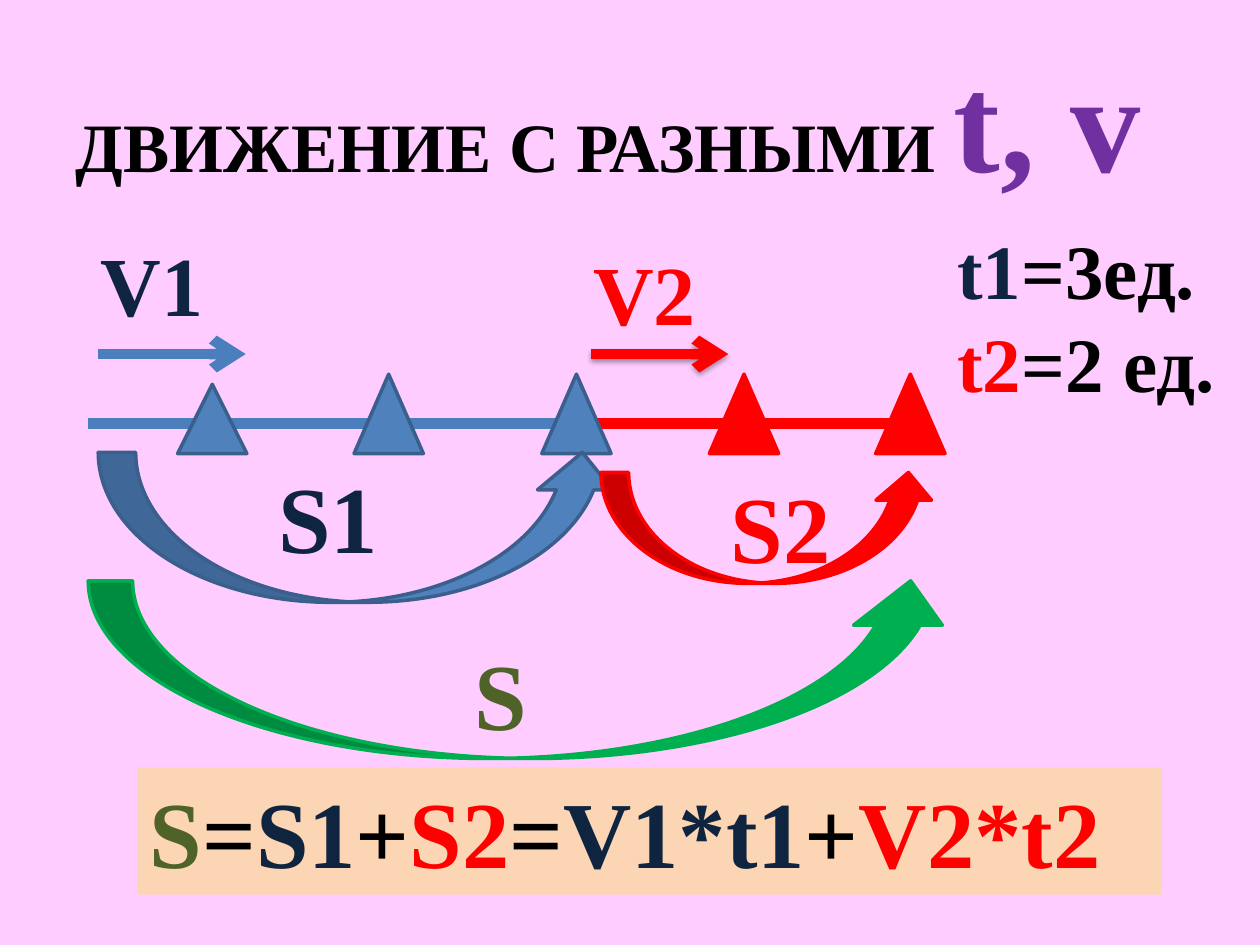
from dataclasses import dataclass

from lxml.etree import SubElement
from pptx import Presentation
from pptx.dml.color import RGBColor
from pptx.enum.shapes import MSO_CONNECTOR, MSO_SHAPE
from pptx.enum.text import MSO_ANCHOR, MSO_AUTO_SIZE, PP_ALIGN
from pptx.oxml.ns import qn
from pptx.util import Inches, Pt

BLACK = "000000"
NAVY = "0F243E"
RED = "FF0000"
BLUE = "4F81BD"
BLUE_EDGE = "3A5F8C"
BLUE_LINE = "4B7EBC"
GREEN = "00B050"
OLIVE = "4F6228"
PURPLE = "7030A0"
PEACH = "FCD5B5"
PINK = "FFCCFF"


@dataclass(frozen=True)
class Segment:
    start: float
    end: float
    y: float
    color: str
    arrow: bool = False
    shadow: bool = False


@dataclass(frozen=True)
class Figure:
    left: float
    top: float
    width: float
    height: float
    fill: str
    edge: str


@dataclass(frozen=True)
class Label:
    left: float
    top: float
    width: float
    height: float
    size: float
    lines: tuple


AXIS = (
    Segment(0.7, 4.53, 3.36, BLUE_LINE),
    Segment(4.53, 7.27, 3.36, RED),
)
SPEEDS = (
    Segment(0.78, 1.95, 2.81, BLUE_LINE, arrow=True),
    Segment(4.69, 5.78, 2.81, RED, arrow=True, shadow=True),
)
MARKERS = (
    Figure(1.41, 3.05, 0.55, 0.55, BLUE, BLUE_EDGE),
    Figure(2.81, 2.97, 0.55, 0.63, BLUE, BLUE_EDGE),
    Figure(4.3, 2.97, 0.55, 0.63, BLUE, BLUE_EDGE),
    Figure(5.63, 2.97, 0.55, 0.63, RED, RED),
    Figure(6.95, 2.97, 0.55, 0.63, RED, RED),
)
DISTANCES = (
    Figure(0.78, 3.59, 4.14, 1.19, BLUE, BLUE_EDGE),
    Figure(4.77, 3.75, 2.66, 0.88, RED, RED),
    Figure(0.7, 4.61, 6.88, 1.41, GREEN, GREEN),
)
LABELS = (
    Label(0.7, 1.8, 1.18, 0.91, 48, ((("V1", NAVY),),)),
    Label(4.61, 1.87, 1.1, 0.91, 48, ((("V2", RED),),)),
    Label(7.5, 1.72, 2.5, 1.58, 44, (
        (("t1", NAVY), ("=3ед.", BLACK)),
        (("t2", RED), ("=2 ед.", BLACK)),
    )),
    Label(2.11, 3.59, 1.38, 1.01, 54, ((("S1", NAVY),),)),
    Label(5.7, 3.67, 1.02, 1.01, 54, ((("S2", RED),),)),
    Label(3.67, 5, 0.78, 1.01, 54, ((("S", OLIVE),),)),
)
FORMULA = Label(1.09, 6.09, 8.13, 1.01, 54, ((
    ("S", OLIVE), ("=", BLACK), ("S1", NAVY), ("+", BLACK), ("S2", RED),
    ("=", BLACK), ("V1*t1", NAVY), ("+", BLACK), ("V2*t2", RED),
),))


def paint(color_format, color: str) -> None:
    color_format.rgb = RGBColor.from_string(color)


def set_fill(fill, color: str) -> None:
    fill.solid()
    paint(fill.fore_color, color)


def add_span(para, text: str, size: float, color: str) -> None:
    span = para.add_run()
    span.text = text
    font_format = {"name": "Times New Roman", "size": Pt(size), "bold": True}
    for name, value in font_format.items():
        setattr(span.font, name, value)
    paint(span.font.color, color)


def write_label(box, label: Label) -> None:
    frame = box.text_frame
    frame_format = {
        "word_wrap": True,
        "auto_size": MSO_AUTO_SIZE.SHAPE_TO_FIT_TEXT,
        "vertical_anchor": MSO_ANCHOR.TOP,
    }
    for name, value in frame_format.items():
        setattr(frame, name, value)
    for index, line in enumerate(label.lines):
        para = frame.add_paragraph() if index else frame.paragraphs[0]
        para.alignment = PP_ALIGN.LEFT
        for text, color in line:
            add_span(para, text, label.size, color)


def bounds(item: Figure | Label) -> list:
    return [Inches(n) for n in (item.left, item.top, item.width, item.height)]


def add_segment(page, segment: Segment) -> None:
    y = Inches(segment.y)
    line = page.shapes.add_connector(
        MSO_CONNECTOR.STRAIGHT, Inches(segment.start), y, Inches(segment.end), y
    )
    line.line.width = Pt(6)
    paint(line.line.color, segment.color)
    if segment.arrow:
        SubElement(line.line._get_or_add_ln(), qn("a:tailEnd"), type="arrow")
    effects = SubElement(line._element.spPr, qn("a:effectLst"))
    if segment.shadow:
        shadow = SubElement(
            effects, qn("a:outerShdw"), blurRad=str(Pt(3.1)), dist=str(Pt(1.8)),
            dir="5400000", rotWithShape="0",
        )
        shade = SubElement(shadow, qn("a:srgbClr"), val=BLACK)
        SubElement(shade, qn("a:alpha"), val="35000")


def add_figure(page, kind: MSO_SHAPE, figure: Figure) -> None:
    shape = page.shapes.add_shape(kind, *bounds(figure))
    shape.shadow.inherit = False
    set_fill(shape.fill, figure.fill)
    paint(shape.line.color, figure.edge)
    shape.line.width = Pt(2)


def add_title(page) -> None:
    title = page.shapes.title
    place = {"left": 0.5, "top": 0.3, "width": 9, "height": 1.25}
    for name, value in place.items():
        setattr(title, name, Inches(value))
    title.text_frame.vertical_anchor = MSO_ANCHOR.MIDDLE
    para = title.text_frame.paragraphs[0]
    para.alignment = PP_ALIGN.JUSTIFY
    add_span(para, "ДВИЖЕНИЕ С РАЗНЫМИ ", 39.6, BLACK)
    add_span(para, "t, v", 80.1, PURPLE)


def add_formula(page) -> None:
    panel = page.shapes.add_shape(MSO_SHAPE.RECTANGLE, *bounds(FORMULA))
    panel.shadow.inherit = False
    set_fill(panel.fill, PEACH)
    panel.line.fill.background()
    write_label(panel, FORMULA)


def main() -> None:
    deck = Presentation()
    deck.slide_width, deck.slide_height = Inches(10), Inches(7.5)
    page = deck.slides.add_slide(deck.slide_layouts[5])
    set_fill(page.background.fill, PINK)
    add_title(page)
    for segment in AXIS + SPEEDS:
        add_segment(page, segment)
    for marker in MARKERS:
        add_figure(page, MSO_SHAPE.ISOSCELES_TRIANGLE, marker)
    for distance in DISTANCES:
        add_figure(page, MSO_SHAPE.CURVED_UP_ARROW, distance)
    for label in LABELS:
        write_label(page.shapes.add_textbox(*bounds(label)), label)
    add_formula(page)
    deck.save("out.pptx")


if __name__ == "__main__":
    main()
